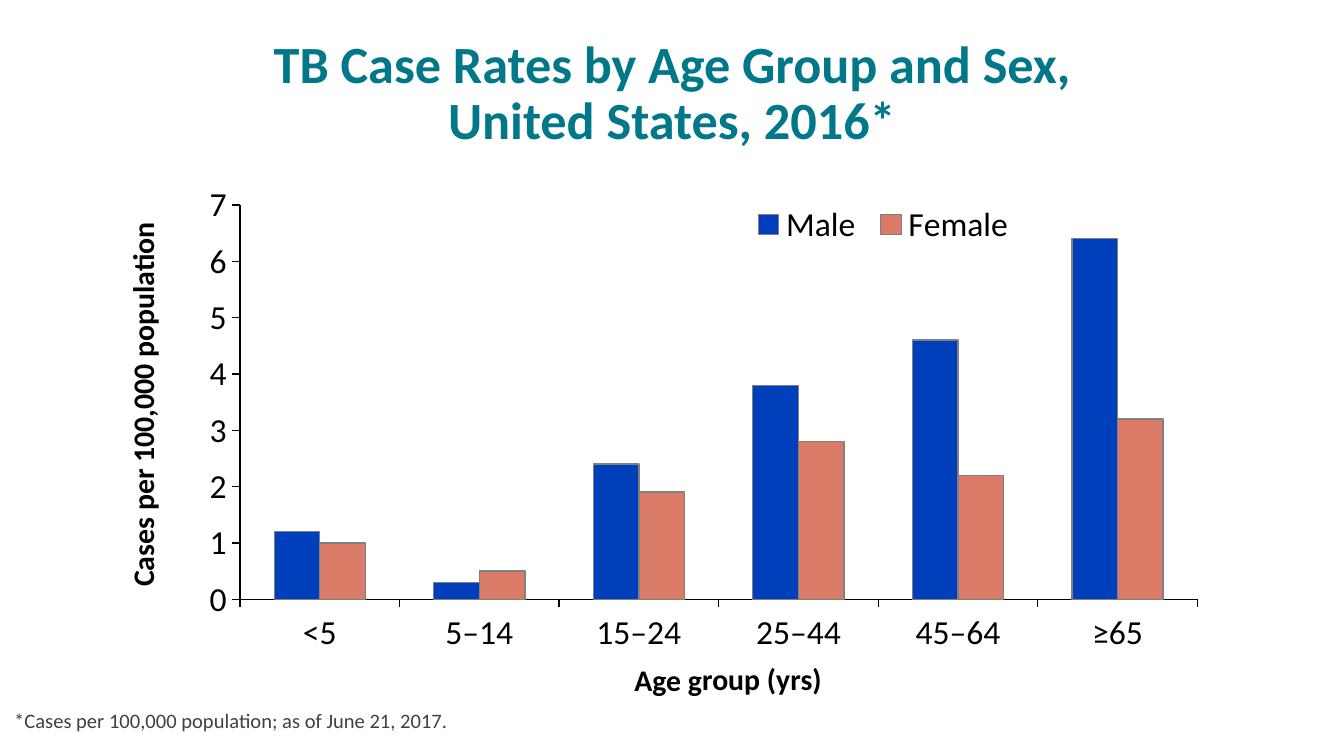
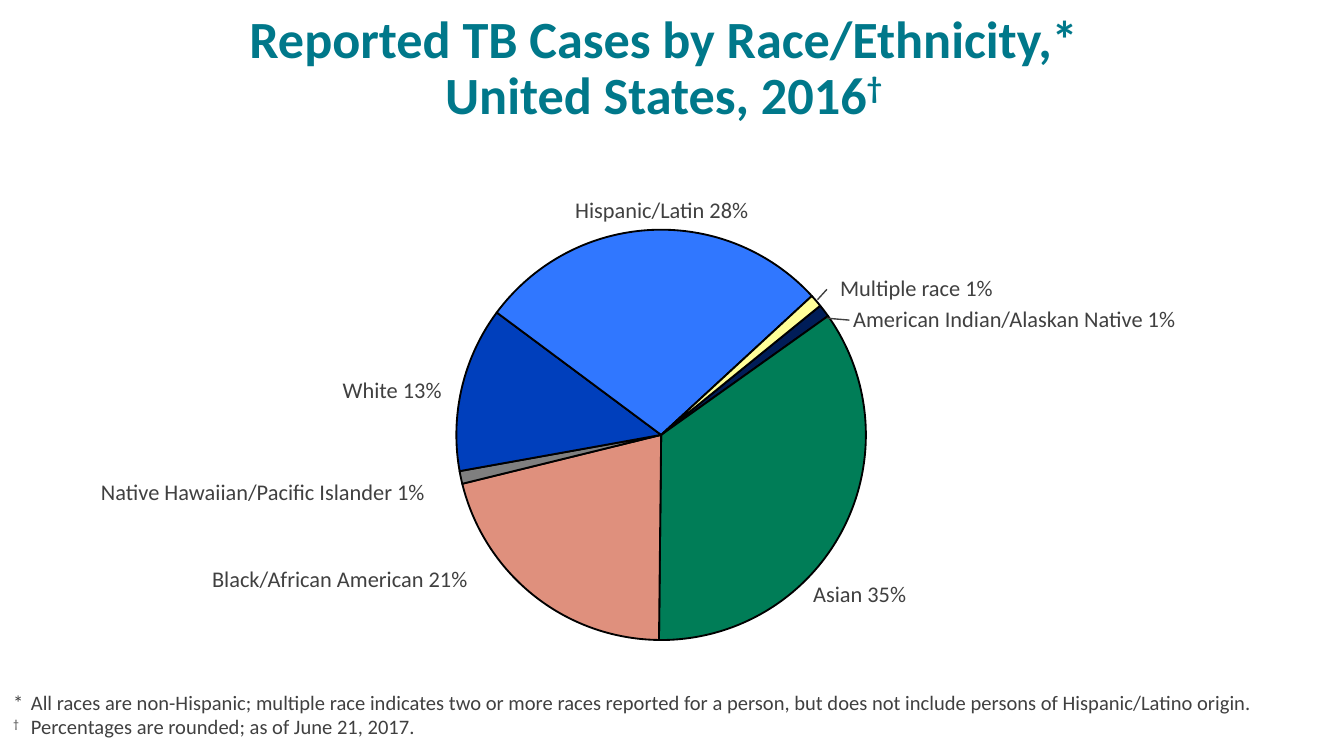
from typing import NamedTuple

from lxml.etree import SubElement
from pptx import Presentation
from pptx.chart.data import CategoryChartData
from pptx.dml.color import RGBColor
from pptx.enum.chart import XL_CHART_TYPE, XL_LEGEND_POSITION, XL_TICK_MARK
from pptx.enum.shapes import MSO_CONNECTOR
from pptx.enum.text import MSO_ANCHOR, PP_ALIGN
from pptx.oxml import parse_xml
from pptx.oxml.ns import nsdecls, qn
from pptx.util import Pt

FONT = "Calibri"
TEAL = "00788A"
DARK_GRAY = "404040"
GRAY = "808080"
BLACK = "000000"
DAGGER = "†"

AGE_GROUPS = ["<5", "5–14", "15–24", "25–44", "45–64", "≥65"]
CASE_RATES = [
    ("Male", [1.2, 0.3, 2.4, 3.8, 4.6, 6.4], "003FBC"),
    ("Female", [1, 0.5, 1.9, 2.8, 2.2, 3.2], "D97B66"),
]
RACE_SHARES = [1, 35, 21, 1, 13, 28, 1, 0]
RACE_COLORS = ["001D58", "007D57", "DF907D", "7F7F7F",
               "003FBC", "3077FF", "FFFF99", "004B34"]
RACE_LABELS = [
    ("Hispanic/Latin 28%", 301, 1.5, 117.5),
    ("Native Hawaiian/Pacific Islander 1%", 47, 152.5, 209.5),
    ("American Indian/Alaskan Native 1%", 450, 60, 213),
    ("Black/African American 21%", 106.5, 199, 183.5),
    ("Asian 35%", 428.5, 207.5, 96),
    ("Multiple race 1%", 443, 43.5, 108),
    ("White 13%", 176.5, 98, 96),
]
LEADER_LINES = [(438, 60.5, 443, 55), (443, 70.5, 455, 71.5)]


class Box(NamedTuple):
    """A rectangle in points."""
    left: float
    top: float
    width: float
    height: float

    def inside(self, left, top, width, height):
        """Return a box placed relative to this one."""
        return Box(self.left + left, self.top + top, width, height)

    def lengths(self):
        """Return the four values as lengths."""
        return [Pt(value) for value in self]


def color(value):
    """Turn a hex string into a colour."""
    return RGBColor.from_string(value)


def style_font(font, size, font_color=BLACK, bold=False):
    """Set the shared font at a size and colour."""
    font.name = FONT
    font.size = Pt(size)
    font.bold = bold
    font.color.rgb = color(font_color)


def style_line(line, line_color, width=0.75):
    """Set the colour and width of a line."""
    line.color.rgb = color(line_color)
    line.width = Pt(width)


def add_text(slide, box, text, size=12, font_color=DARK_GRAY, bold=False,
             align=PP_ALIGN.LEFT, anchor=MSO_ANCHOR.TOP, line_spacing=None,
             hanging=0, rotation=0, wrap=True):
    """Add a text box; newlines part paragraphs, vertical tabs break lines."""
    shape = slide.shapes.add_textbox(*box.lengths())
    shape.rotation = rotation
    frame = shape.text_frame
    frame.word_wrap = wrap
    frame.vertical_anchor = anchor
    for number, content in enumerate(text.split("\n")):
        paragraph = frame.add_paragraph() if number else frame.paragraphs[0]
        paragraph.alignment = align
        if line_spacing:
            paragraph.line_spacing = Pt(line_spacing)
        if hanging:
            properties = paragraph._p.get_or_add_pPr()
            properties.set("marL", str(Pt(hanging)))
            properties.set("indent", str(-Pt(hanging)))
        for line_number, line in enumerate(content.split("\v")):
            if line_number:
                paragraph.add_line_break()
            for part in filter(None, line.partition(DAGGER)):
                run = paragraph.add_run()
                run.text = part
                style_font(run.font, size, font_color, bold)
                if part == DAGGER:
                    run._r.get_or_add_rPr().set("baseline", "30000")
    return shape


def add_title(slide, box, text):
    """Add the slide title."""
    add_text(slide, box, text, size=28, font_color=TEAL, bold=True,
             align=PP_ALIGN.CENTER, anchor=MSO_ANCHOR.BOTTOM, line_spacing=30)


def add_footnote(slide, box, text, hanging=0):
    """Add the footnote at the foot of a slide."""
    add_text(slide, box, text, size=11, hanging=hanging)


def add_leader(slide, box, begin_x, begin_y, end_x, end_y):
    """Add a thin line from a slice to its label."""
    points = (box.left + begin_x, box.top + begin_y,
              box.left + end_x, box.top + end_y)
    connector = slide.shapes.add_connector(
        MSO_CONNECTOR.STRAIGHT, *[Pt(value) for value in points])
    style_line(connector.line, DARK_GRAY)
    SubElement(connector._element.spPr, qn("a:effectLst"))


def set_layout(element, position, inner, **fractions):
    """Fix the place of a chart part as fractions of the chart."""
    for layout in element.findall(qn("c:layout")):
        element.remove(layout)
    target = '<c:layoutTarget val="inner"/>' if inner else ""
    modes = "".join(f'<c:{name}Mode val="edge"/>' for name in "xy")
    values = "".join(f'<c:{name} val="{value}"/>'
                     for name, value in fractions.items())
    element.insert(position, parse_xml(
        f'<c:layout {nsdecls("c")}><c:manualLayout>{target}{modes}{values}'
        '</c:manualLayout></c:layout>'))


def add_chart(slide, box, kind, categories, series, size):
    """Add a chart without title or legend."""
    data = CategoryChartData()
    data.categories = categories
    for name, values in series:
        data.add_series(name, values)
    chart = slide.shapes.add_chart(kind, *box.lengths(), data).chart
    chart.has_title = False
    chart.has_legend = False
    style_font(chart.font, size)
    return chart


def add_rate_chart(slide, box):
    """Add the clustered columns with both axis titles."""
    chart = add_chart(slide, box.inside(101, 0, 551.5, 297.5),
                      XL_CHART_TYPE.COLUMN_CLUSTERED, AGE_GROUPS,
                      [rates[:2] for rates in CASE_RATES], 18)
    plot = chart.plots[0]
    plot.vary_by_categories = False
    plot.gap_width = 150
    plot.overlap = 0
    for series, (_, _, fill_color) in zip(plot.series, CASE_RATES):
        series.format.fill.solid()
        series.format.fill.fore_color.rgb = color(fill_color)
        style_line(series.format.line, GRAY)
    for axis in (chart.category_axis, chart.value_axis):
        axis.has_major_gridlines = False
        axis.major_tick_mark = XL_TICK_MARK.OUTSIDE
        axis.minor_tick_mark = XL_TICK_MARK.NONE
        style_font(axis.tick_labels.font, 18)
        style_line(axis.format.line, BLACK)
    chart.value_axis.minimum_scale = 0
    chart.value_axis.maximum_scale = 7
    chart.value_axis.major_unit = 1
    chart.value_axis.tick_labels.number_format = "#,##0"
    chart.value_axis.tick_labels.number_format_is_linked = False
    chart.has_legend = True
    chart.legend.position = XL_LEGEND_POSITION.BOTTOM
    chart.legend.include_in_layout = False
    style_font(chart.legend.font, 18)
    set_layout(chart._chartSpace.chart.plotArea, 0, True,
               x=0.05, y=0.06, w=0.93, h=0.71)
    set_layout(chart.legend._element, 1, False, x=0.54, y=0.05, w=0.27, h=0.09)
    axis_title = {"size": 16, "font_color": BLACK, "bold": True,
                  "align": PP_ALIGN.CENTER}
    add_text(slide, box.inside(-63.5, 111.5, 279.5, 26.5),
             "Cases per 100,000 population", rotation=270, **axis_title)
    add_text(slide, box.inside(326, 258.5, 128, 26.5), "Age group (yrs)",
             rotation=359.6, wrap=False, **axis_title)


def add_race_chart(slide, box):
    """Add the pie with its labels and leader lines."""
    chart = add_chart(slide, box.inside(244, 19.5, 239, 264),
                      XL_CHART_TYPE.PIE,
                      [str(number + 1) for number in range(len(RACE_SHARES))],
                      [("Series 1", RACE_SHARES)], 10)
    plot = chart.plots[0]
    plot.vary_by_categories = True
    series = plot.series[0]
    style_line(series.format.line, BLACK, 1)
    for index, fill_color in enumerate(RACE_COLORS):
        point = series.points[index]
        point.format.fill.solid()
        point.format.fill.fore_color.rgb = color(fill_color)
        style_line(point.format.line, BLACK, 1)
    pie = plot._element
    for angle in pie.findall(qn("c:firstSliceAng")):
        pie.remove(angle)
    SubElement(pie, qn("c:firstSliceAng")).set("val", "51")
    set_layout(chart._chartSpace.chart.plotArea, 0, True,
               x=0, y=0, w=0.92, h=0.86)
    for text, left, top, width in RACE_LABELS:
        add_text(slide, box.inside(left, top, width, 21.5), text)
    for leader in LEADER_LINES:
        add_leader(slide, box, *leader)


def build_rate_slide(slide, box):
    """Build the slide on case rates by age and sex."""
    add_title(slide, box.inside(36, 16.5, 648, 67.5),
              "TB Case Rates by Age Group and Sex,\vUnited States, 2016*")
    add_rate_chart(slide, box.inside(0, 92, 720, 298))
    add_footnote(slide, box.inside(0.5, 376, 270, 22.5),
                 "*Cases per 100,000 population; as of June 21, 2017.")


def build_race_slide(slide, box):
    """Build the slide on cases by race and ethnicity."""
    add_title(slide, box.inside(31.5, 3, 648, 67.5),
              "Reported TB Cases by Race/Ethnicity,*\vUnited States, 2016†")
    add_race_chart(slide, box.inside(0, 100, 720, 284))
    add_footnote(slide, box.inside(0, 366, 720, 39),
                 "*\tAll races are non-Hispanic; multiple race indicates two or "
                 "more races reported for a person, but does not include "
                 "persons of Hispanic/Latino origin.\n"
                 "†\tPercentages are rounded; as of June 21, 2017.", hanging=9.5)


def main():
    """Build and save the presentation."""
    presentation = Presentation()
    page = Box(0, 0, 720, 405)
    presentation.slide_width = Pt(page.width)
    presentation.slide_height = Pt(page.height)
    for build in (build_rate_slide, build_race_slide):
        build(presentation.slides.add_slide(presentation.slide_layouts[6]), page)
    presentation.save("out.pptx")


if __name__ == "__main__":
    main()
